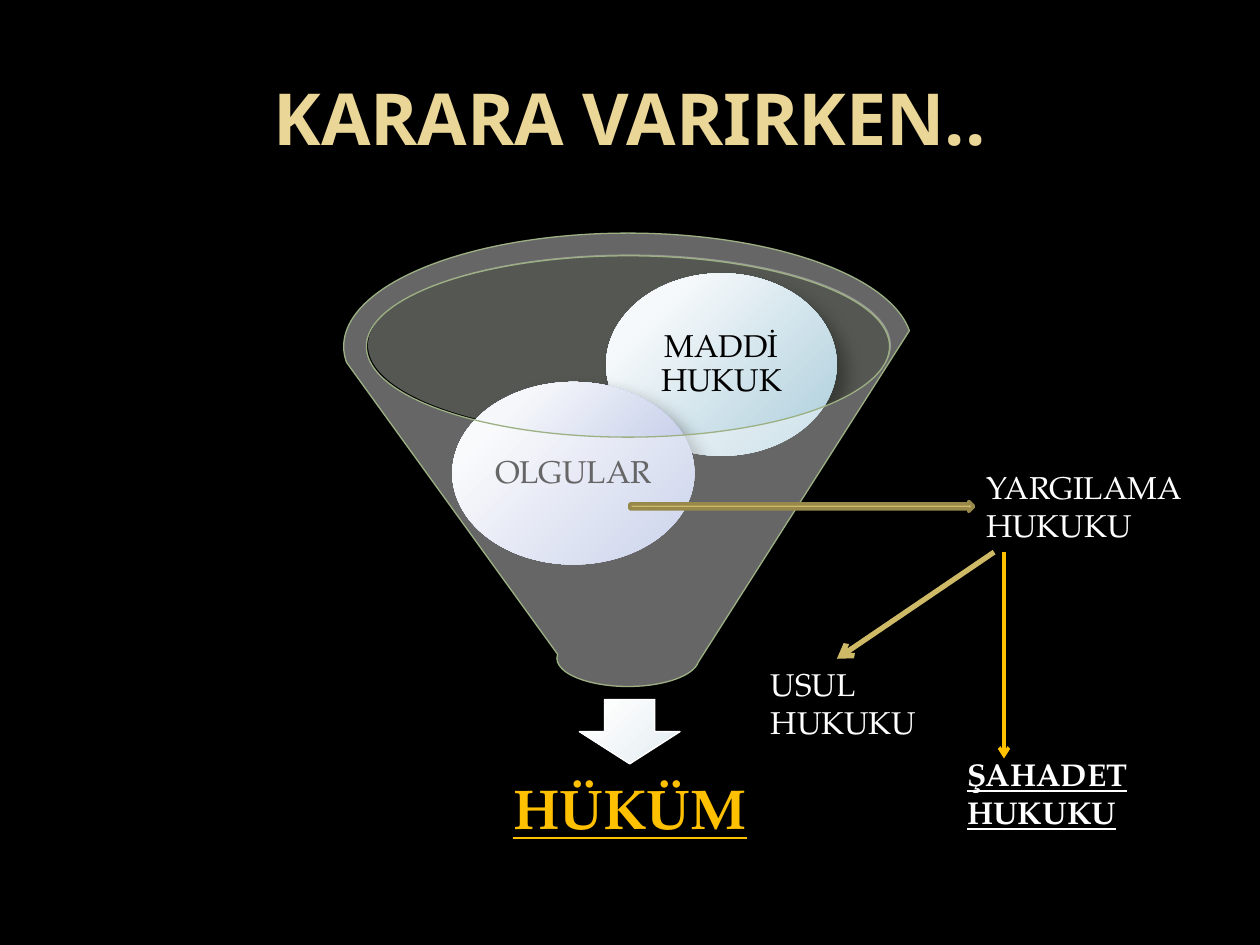
from dataclasses import dataclass

from lxml import etree
from pptx import Presentation
from pptx.dml.color import RGBColor
from pptx.enum.shapes import MSO_CONNECTOR, MSO_SHAPE
from pptx.enum.text import MSO_ANCHOR, PP_ALIGN
from pptx.oxml.ns import qn
from pptx.shapes.autoshape import Shape
from pptx.shapes.connector import Connector
from pptx.slide import Slide
from pptx.util import Cm, Pt

CENTER, LEFT = PP_ALIGN.CENTER, PP_ALIGN.LEFT
MIDDLE, TOP = MSO_ANCHOR.MIDDLE, MSO_ANCHOR.TOP
ELLIPSE, FUNNEL = MSO_SHAPE.OVAL, MSO_SHAPE.FUNNEL
DOWN_ARROW, RIGHT_ARROW = MSO_SHAPE.DOWN_ARROW, MSO_SHAPE.RIGHT_ARROW
STRAIGHT = MSO_CONNECTOR.STRAIGHT

TITLE_FONT, BODY_FONT = "Noto Sans", "TeX Gyre Pagella"
COLORS = {
    "black": "000000",
    "white": "FFFFFF",
    "title": "EAD696",
    "amber": "FFC000",
    "gold": "CEB966",
    "dark gold": "98894B",
    "rim": "D5DCCE",
    "green": "9CB084",
    "arrow light": "FCFDFD",
    "arrow dark": "E2ECF1",
    "blue light": "F6F9FB",
    "blue dark": "AACDDB",
    "violet light": "F6F7FB",
    "violet dark": "A8B5DF",
}


@dataclass(frozen=True)
class Box:
    left: float
    top: float
    width: float
    height: float

    def lengths(self) -> tuple[Cm, Cm, Cm, Cm]:
        return Cm(self.left), Cm(self.top), Cm(self.width), Cm(self.height)


@dataclass(frozen=True)
class Style:
    size: float = 18
    color: str = "white"
    font: str = BODY_FONT
    bold: bool = False
    underline: bool = False
    align: PP_ALIGN = LEFT
    anchor: MSO_ANCHOR = TOP
    spacing: float = 1.0


@dataclass(frozen=True)
class Label:
    text: str
    box: Box
    style: Style = Style()


@dataclass(frozen=True)
class Ball:
    text: str
    box: Box
    light: str
    dark: str


@dataclass(frozen=True)
class Arrow:
    start: tuple[float, float]
    end: tuple[float, float]
    color: str
    width: float


BALL_STYLE = Style(color="black", align=CENTER, anchor=MIDDLE, spacing=0.9)
TITLE = Label(
    "KARARA VARIRKEN..",
    Box(1.27, 0.76, 22.86, 3.18),
    Style(41, "title", TITLE_FONT, bold=True, align=CENTER, anchor=MIDDLE),
)
VERDICT = Label(
    "HÜKÜM",
    Box(7.8, 15.42, 9.8, 1.88),
    Style(32, "amber", bold=True, underline=True, align=CENTER, anchor=MIDDLE, spacing=0.9),
)
BALLS = [
    Ball("MADDİ HUKUK", Box(12.22, 5.51, 4.65, 3.68), "blue light", "blue dark"),
    Ball("OLGULAR", Box(9.12, 7.7, 4.88, 3.68), "violet light", "violet dark"),
]
BRANCHES = [
    Label("YARGILAMA HUKUKU", Box(19.63, 9.32, 4.95, 1.8)),
    Label("ŞAHADET HUKUKU", Box(19.25, 15.09, 4.57, 1.8), Style(bold=True, underline=True)),
    Label("USUL HUKUKU", Box(15.29, 13.28, 4.17, 1.8)),
]
ARROWS = [
    Arrow((20.04, 11.13), (16.87, 13.28), "gold", 3),
    Arrow((20.24, 11.13), (20.24, 15.29), "amber", 2),
]


def rgb(name: str) -> RGBColor:
    return RGBColor.from_string(COLORS[name])


def write_text(shape: Shape, text: str, style: Style, inset: float | None = None) -> None:
    frame = shape.text_frame
    frame.word_wrap = True
    frame.vertical_anchor = style.anchor
    if inset is not None:
        frame.margin_left = frame.margin_right = Cm(inset)
        frame.margin_top = frame.margin_bottom = Cm(inset)
    paragraph = frame.paragraphs[0]
    paragraph.text = text
    paragraph.alignment = style.align
    paragraph.line_spacing = style.spacing
    font = paragraph.font
    font.name, font.size = style.font, Pt(style.size)
    font.bold, font.underline = style.bold, style.underline
    font.color.rgb = rgb(style.color)


def add_label(slide: Slide, label: Label, inset: float | None = None) -> None:
    shape = slide.shapes.add_textbox(*label.box.lengths())
    write_text(shape, label.text, label.style, inset)


def add_plain_shape(
    slide: Slide, kind: MSO_SHAPE, box: Box, line: str | None = None, width: float = 0.75
) -> Shape:
    shape = slide.shapes.add_shape(kind, *box.lengths())
    shape.shadow.inherit = False
    if line:
        shape.line.color.rgb = rgb(line)
        shape.line.width = Pt(width)
    else:
        shape.line.fill.background()
    return shape


def fill_solid(shape: Shape, color: str, opacity: int = 100) -> None:
    shape.fill.solid()
    shape.fill.fore_color.rgb = rgb(color)
    if opacity < 100:
        color_element = shape._element.spPr.find(qn("a:solidFill"))[0]
        etree.SubElement(color_element, qn("a:alpha"), val=str(opacity * 1000))


def fill_glossy(shape: Shape, light: str, dark: str) -> None:
    shape.fill.gradient()
    for stop, color, position in zip(shape.fill.gradient_stops, (light, dark), (0.2, 1)):
        stop.color.rgb = rgb(color)
        stop.position = position
    properties = shape._element.spPr
    gradient = properties.find(qn("a:gradFill"))
    gradient.remove(gradient.find(qn("a:lin")))
    path = etree.SubElement(gradient, qn("a:path"), path="circle")
    etree.SubElement(path, qn("a:fillToRect"), l="-15000", t="-15000", r="115000", b="115000")
    shadow = etree.SubElement(
        properties.find(qn("a:effectLst")),
        qn("a:outerShdw"),
        blurRad=str(Pt(10.2)),
        dist=str(Pt(8)),
        dir="2700000",
        rotWithShape="0",
    )
    shadow_color = etree.SubElement(shadow, qn("a:srgbClr"), val=COLORS["black"])
    etree.SubElement(shadow_color, qn("a:alpha"), val="35000")


def add_arrow(slide: Slide, arrow: Arrow) -> Connector:
    points = [Cm(value) for value in arrow.start + arrow.end]
    connector = slide.shapes.add_connector(STRAIGHT, *points)
    connector.line.color.rgb = rgb(arrow.color)
    connector.line.width = Pt(arrow.width)
    properties = connector._element.spPr
    etree.SubElement(properties.find(qn("a:ln")), qn("a:tailEnd"), type="arrow")
    etree.SubElement(properties, qn("a:effectLst"))
    return connector


def main() -> None:
    presentation = Presentation()
    presentation.slide_width, presentation.slide_height = Cm(25.4), Cm(19.05)
    slide = presentation.slides.add_slide(presentation.slide_layouts[6])
    slide.background.fill.solid()
    slide.background.fill.fore_color.rgb = rgb("black")

    add_label(slide, TITLE)
    rim = add_plain_shape(slide, ELLIPSE, Box(7.42, 5.13, 10.54, 3.66))
    fill_solid(rim, "rim", 40)
    outlet = add_plain_shape(slide, DOWN_ARROW, Box(11.68, 14.1, 2.03, 1.3), "white")
    fill_glossy(outlet, "arrow light", "arrow dark")
    add_label(slide, VERDICT, 0.64)
    for ball in BALLS:
        shape = add_plain_shape(slide, ELLIPSE, ball.box)
        fill_glossy(shape, ball.light, ball.dark)
        write_text(shape, ball.text, BALL_STYLE, 0.08)
    funnel = add_plain_shape(slide, FUNNEL, Box(6.93, 4.7, 11.46, 9.14), "green")
    fill_solid(funnel, "white", 40)
    pointer = add_plain_shape(slide, RIGHT_ARROW, Box(12.7, 10.11, 6.93, 0.2), "dark gold", 2)
    fill_solid(pointer, "gold")
    for arrow in ARROWS:
        add_arrow(slide, arrow)
    for branch in BRANCHES:
        add_label(slide, branch)
    presentation.save("out.pptx")


if __name__ == "__main__":
    main()
